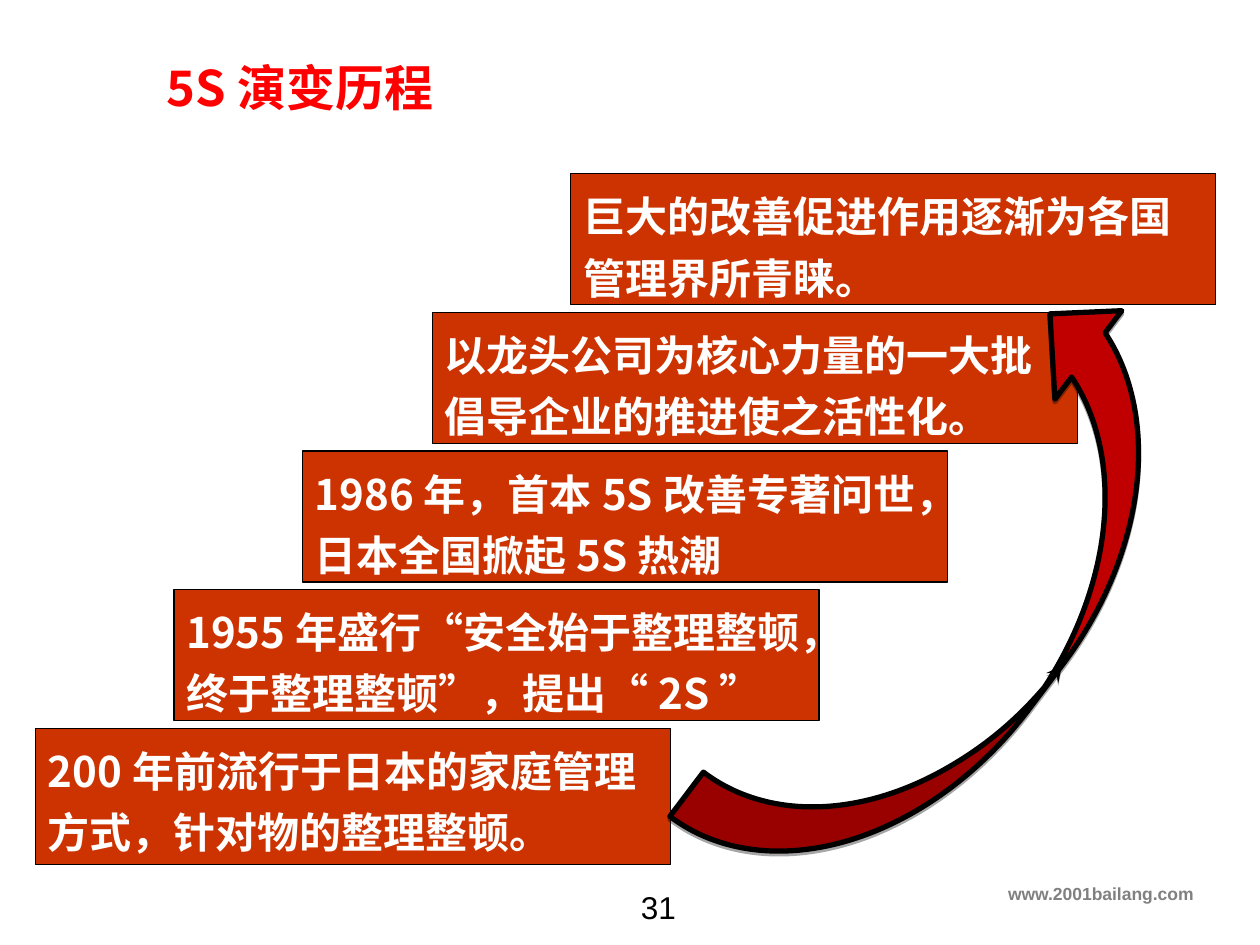
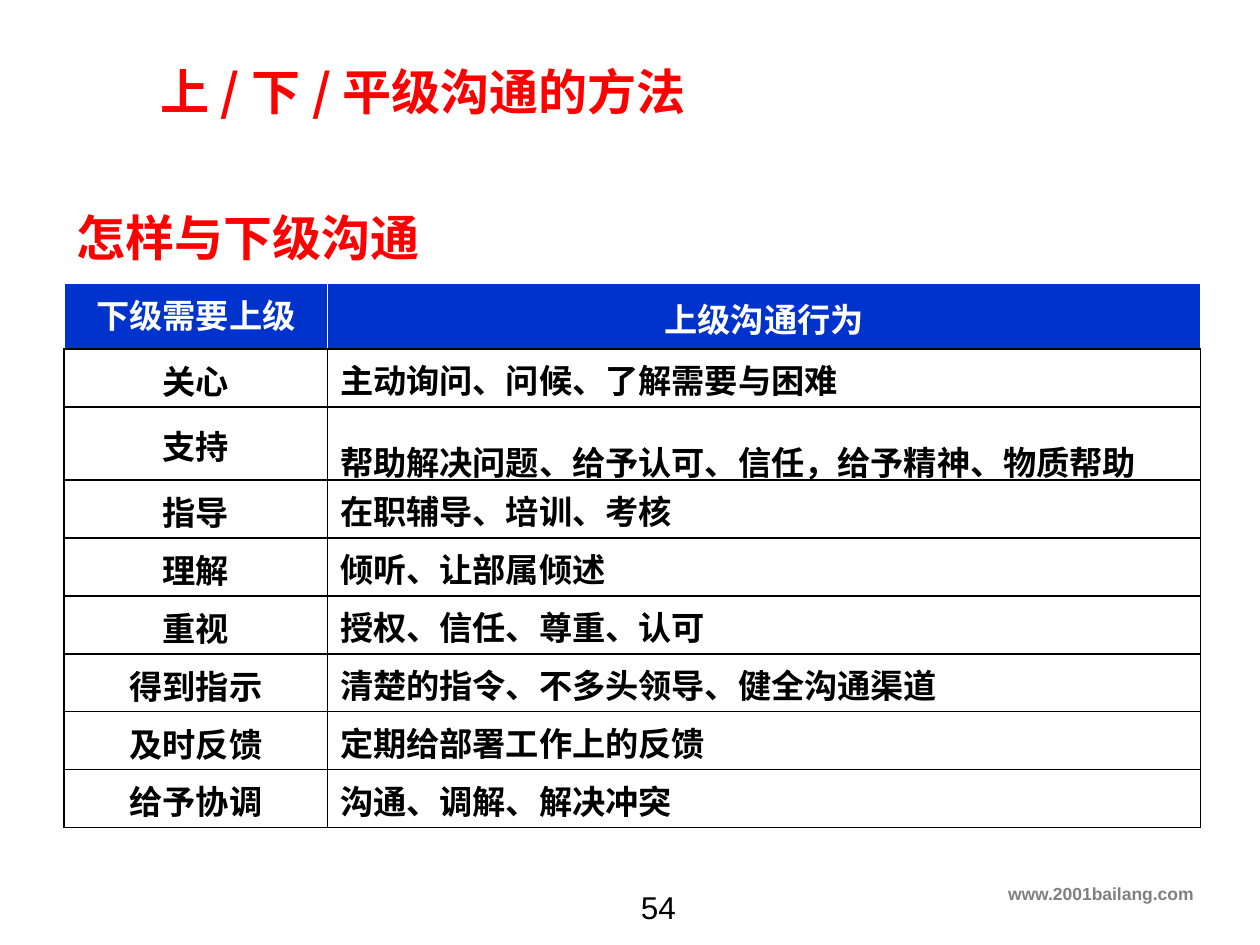
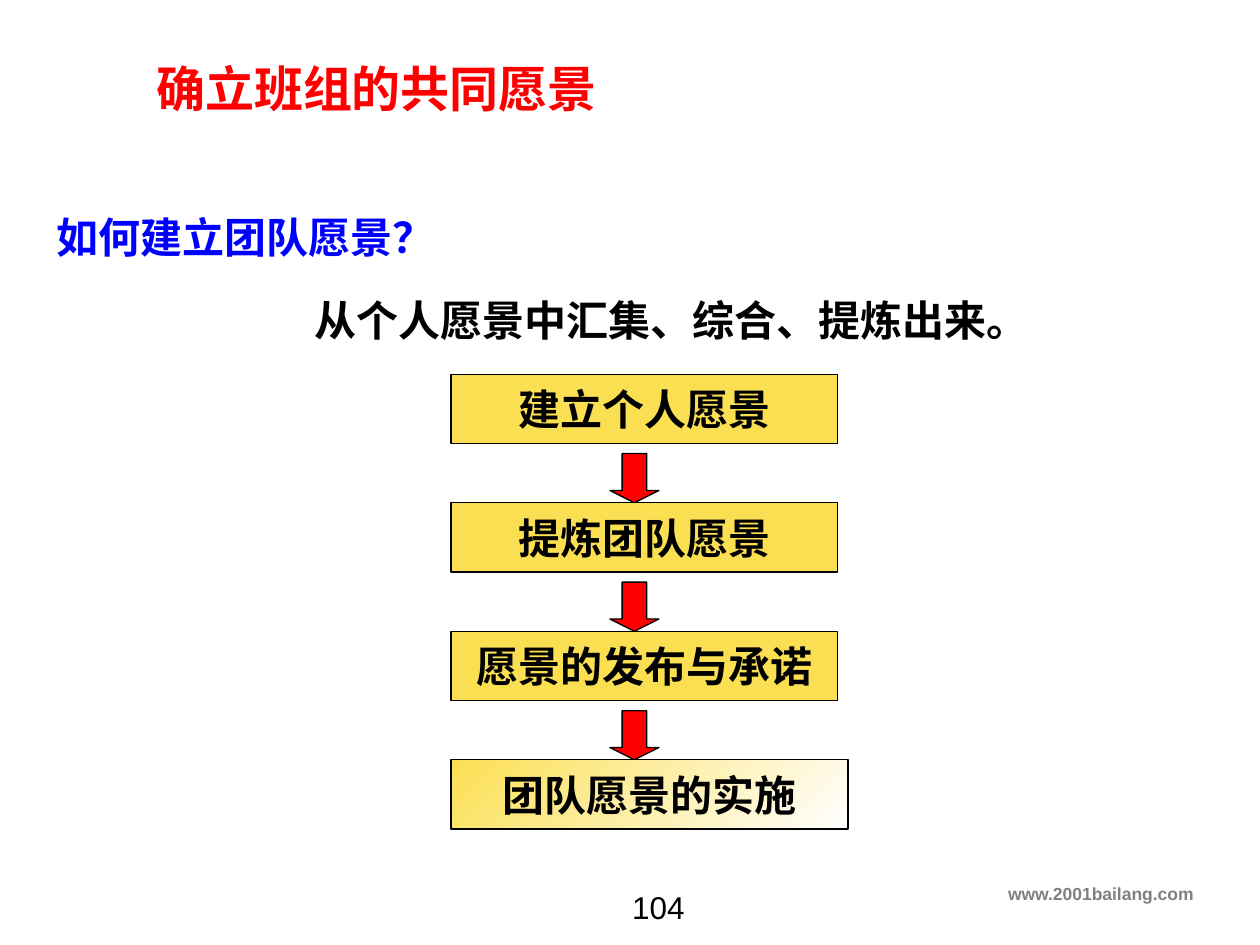
from dataclasses import dataclass

from lxml import etree
from pptx import Presentation
from pptx.dml.color import RGBColor
from pptx.enum.shapes import MSO_SHAPE as Preset
from pptx.enum.text import MSO_ANCHOR as Anchor, MSO_AUTO_SIZE as AutoSize, PP_ALIGN as Align
from pptx.oxml import parse_xml
from pptx.oxml.ns import nsdecls, qn
from pptx.util import Inches, Pt

CJK = "Noto Sans CJK SC"
LATIN = "Arial"
RED, BLUE, BLACK, WHITE = "FF0000", "0000FF", "000000", "FFFFFF"
STEP_FILL, ARROW_FILL = "CC3300", "C00000"
HEADER_FILL, VISION_FILL, FOOTER_GRAY = "0033CC", "FBDF53", "808080"
WEB_ADDRESS = "www.2001bailang.com"


@dataclass(frozen=True)
class Box:
    left: float
    top: float
    width: float
    height: float

    def emu(self) -> tuple:
        return tuple(map(Inches, (self.left, self.top, self.width, self.height)))


@dataclass(frozen=True)
class Style:
    size: float
    color: str = BLACK
    font: str = CJK
    bold: bool = True
    align: Align = Align.LEFT
    anchor: Anchor = Anchor.TOP


@dataclass(frozen=True)
class Step:
    left: float
    text: str
    width: float = 5.12
    height: float = 1.04


@dataclass(frozen=True)
class Need:
    name: str
    action: str
    height: float = 0.46
    spacing: float = 1.0


TITLE = Style(28, RED)
SUBTITLE = Style(28, RED)
STEP_TEXT = Style(24, WHITE)
VISION_TEXT = Style(24, align=Align.CENTER, anchor=Anchor.MIDDLE)
FOOTER = Style(10, FOOTER_GRAY, LATIN, align=Align.RIGHT)
PAGE_NUMBER = Style(18, BLACK, LATIN, bold=False, align=Align.CENTER)


# Shared helpers
def rgb(value: str) -> RGBColor:
    return RGBColor.from_string(value)


def write(frame, text: str, style: Style, spacing=None) -> None:
    frame.word_wrap = True
    frame.text = text
    paragraph = frame.paragraphs[0]
    paragraph.alignment = style.align
    paragraph.space_before = Pt(0)
    if spacing:
        paragraph.line_spacing = spacing
    font = paragraph.font
    font.size, font.bold, font.name = Pt(style.size), style.bold, style.font
    font.color.rgb = rgb(style.color)
    defaults = paragraph._p.pPr.find(qn("a:defRPr"))
    etree.SubElement(defaults, qn("a:ea")).set("typeface", style.font)


def add_text(slide, box: Box, text: str, style: Style) -> None:
    frame = slide.shapes.add_textbox(*box.emu()).text_frame
    write(frame, text, style)
    frame.vertical_anchor = style.anchor


def add_block(slide, preset: Preset, box: Box, fill: str, line_width: float = 0.75):
    block = slide.shapes.add_shape(preset, *box.emu())
    block.shadow.inherit = False
    block.fill.solid()
    block.fill.fore_color.rgb = rgb(fill)
    block.line.color.rgb = rgb(BLACK)
    block.line.width = Pt(line_width)
    return block


def add_label(slide, box: Box, fill: str, text: str, style: Style, spacing=None):
    label = add_block(slide, Preset.RECTANGLE, box, fill)
    write(label.text_frame, text, style, spacing)
    label.text_frame.vertical_anchor = style.anchor
    return label


def new_slide(deck, title: str, box: Box, number: int, anchor: Anchor = Anchor.TOP):
    slide = deck.slides.add_slide(deck.slide_layouts[5])
    heading = slide.shapes.title
    heading.left, heading.top, heading.width, heading.height = box.emu()
    write(heading.text_frame, title, TITLE)
    heading.text_frame.auto_size = AutoSize.NONE
    heading.text_frame.vertical_anchor = anchor
    add_text(slide, Box(0, 6.96, 9.57, 0.35), WEB_ADDRESS, FOOTER)
    add_text(slide, Box(4.06, 7, 2.33, 0.4), str(number), PAGE_NUMBER)
    return slide


# History of 5S: staircase and rising arrow
STEPS = [
    Step(4.53, "巨大的改善促进作用逐渐为各国管理界所青睐。"),
    Step(3.43, "以龙头公司为核心力量的一大批倡导企业的推进使之活性化。"),
    Step(2.4, "1986年，首本5S改善专著问世，日本全国掀起5S热潮"),
    Step(1.38, "1955年盛行“安全始于整理整顿，终于整理整顿”，提出“2S”"),
    Step(0.28, "200年前流行于日本的家庭管理方式，针对物的整理整顿。", 5.04, 1.08),
]


def build_history(deck) -> None:
    slide = new_slide(deck, "5S演变历程", Box(1.22, 0.41, 3.31, 0.57), 31)
    for row, step in enumerate(STEPS):
        box = Box(step.left, 1.38 + 1.1 * row, step.width, step.height)
        add_label(slide, box, STEP_FILL, step.text, STEP_TEXT, Pt(35))

    rise = add_block(slide, Preset.CURVED_UP_ARROW, Box(4.94, 3.96, 5.44, 1.76), ARROW_FILL, 3)
    rise.rotation = 307.1
    etree.SubElement(rise.line._get_or_add_ln(), qn("a:tailEnd")).set("type", "stealth")
    rise._element.spPr.find(qn("a:effectLst")).append(parse_xml(
        f'<a:outerShdw {nsdecls("a")} blurRad="0" dist="{Pt(1.6)}" dir="5400000" rotWithShape="0">'
        f'<a:srgbClr val="{BLACK}"><a:alpha val="34000"/></a:srgbClr></a:outerShdw>'))


# Talking with subordinates: table of needs
NEEDS = [
    Need("下级需要上级", "上级沟通行为", 0.52),
    Need("关心", "主动询问、问候、了解需要与困难"),
    Need("支持", "帮助解决问题、给予认可、信任，给予精神、物质帮助", 0.58, 1.5),
    Need("指导", "在职辅导、培训、考核"),
    Need("理解", "倾听、让部属倾述"),
    Need("重视", "授权、信任、尊重、认可"),
    Need("得到指示", "清楚的指令、不多头领导、健全沟通渠道"),
    Need("及时反馈", "定期给部署工作上的反馈"),
    Need("给予协调", "沟通、调解、解决冲突"),
]


def set_borders(cell, color: str, bottom: str) -> None:
    properties = cell._tc.get_or_add_tcPr()
    edges = {"lnL": color, "lnR": color, "lnT": color, "lnB": bottom}
    for index, (edge, edge_color) in enumerate(edges.items()):
        properties.insert(index, parse_xml(
            f'<a:{edge} {nsdecls("a")} w="{Pt(1)}"><a:solidFill>'
            f'<a:srgbClr val="{edge_color}"/></a:solidFill></a:{edge}>'))


def fill_cell(cell, text: str, style: Style, header: bool, spacing: float) -> None:
    write(cell.text_frame, text, style, spacing)
    cell.vertical_anchor = style.anchor
    cell.margin_bottom = Inches(0.02 if spacing == 1 else 0)
    if header:
        cell.fill.solid()
        cell.fill.fore_color.rgb = rgb(HEADER_FILL)
    else:
        cell.fill.background()
    set_borders(cell, WHITE if header else BLACK, BLACK)


def build_communication(deck) -> None:
    slide = new_slide(deck, "上/下/平级沟通的方法", Box(1.17, 0.44, 5.78, 0.57), 54)
    add_text(slide, Box(0.51, 1.6, 2.95, 0.57), "怎样与下级沟通", SUBTITLE)
    frame = Box(0.51, 2.25, 9.02, 4.32)
    table = slide.shapes.add_table(len(NEEDS), 2, *frame.emu()).table
    table.first_row = table.horz_banding = False
    for column, width in zip(table.columns, (2.09, 6.93)):
        column.width = Inches(width)
    for index, need in enumerate(NEEDS):
        header = index == 0
        color = WHITE if header else BLACK
        centered = Style(19, color, align=Align.CENTER, anchor=Anchor.MIDDLE)
        styles = ((Style(19, color, align=Align.CENTER), centered) if header
                  else (centered, Style(19, color)))
        spacings = (1.0, need.spacing)
        table.rows[index].height = Inches(need.height)
        for column, text in enumerate((need.name, need.action)):
            fill_cell(table.cell(index, column), text, styles[column], header, spacings[column])


# Shared vision: downward flow
VISION_STAGES = ["建立个人愿景", "提炼团队愿景", "愿景的发布与承诺", "团队愿景的实施"]


def build_vision(deck) -> None:
    slide = new_slide(deck, "确立班组的共同愿景", Box(1.14, 0.45, 7.64, 0.53), 104, Anchor.BOTTOM)
    add_text(slide, Box(0.35, 1.63, 6.14, 0.5), "如何建立团队愿景？", Style(24, BLUE))
    add_text(slide, Box(2.4, 2.29, 5.9, 0.5), "从个人愿景中汇集、综合、提炼出来。", Style(24))
    for index, stage in enumerate(VISION_STAGES):
        top = 2.97 + 1.02 * index
        last = index == len(VISION_STAGES) - 1
        box = Box(3.58, top, 3.15 if last else 3.07, 0.55)
        label = add_label(slide, box, VISION_FILL, stage, VISION_TEXT)
        if last:
            label.fill.gradient()
            label.fill.gradient_angle = 315
            for stop, color in zip(label.fill.gradient_stops, (VISION_FILL, WHITE)):
                stop.color.rgb = rgb(color)
        else:
            arrow = add_block(slide, Preset.DOWN_ARROW, Box(4.84, top + 0.63, 0.39, 0.39), RED)
            arrow.adjustments[0], arrow.adjustments[1] = 0.5, 0.25


def main() -> None:
    deck = Presentation()
    deck.slide_width, deck.slide_height = Inches(10), Inches(7.5)
    build_history(deck)
    build_communication(deck)
    build_vision(deck)
    deck.save("out.pptx")


if __name__ == "__main__":
    main()
